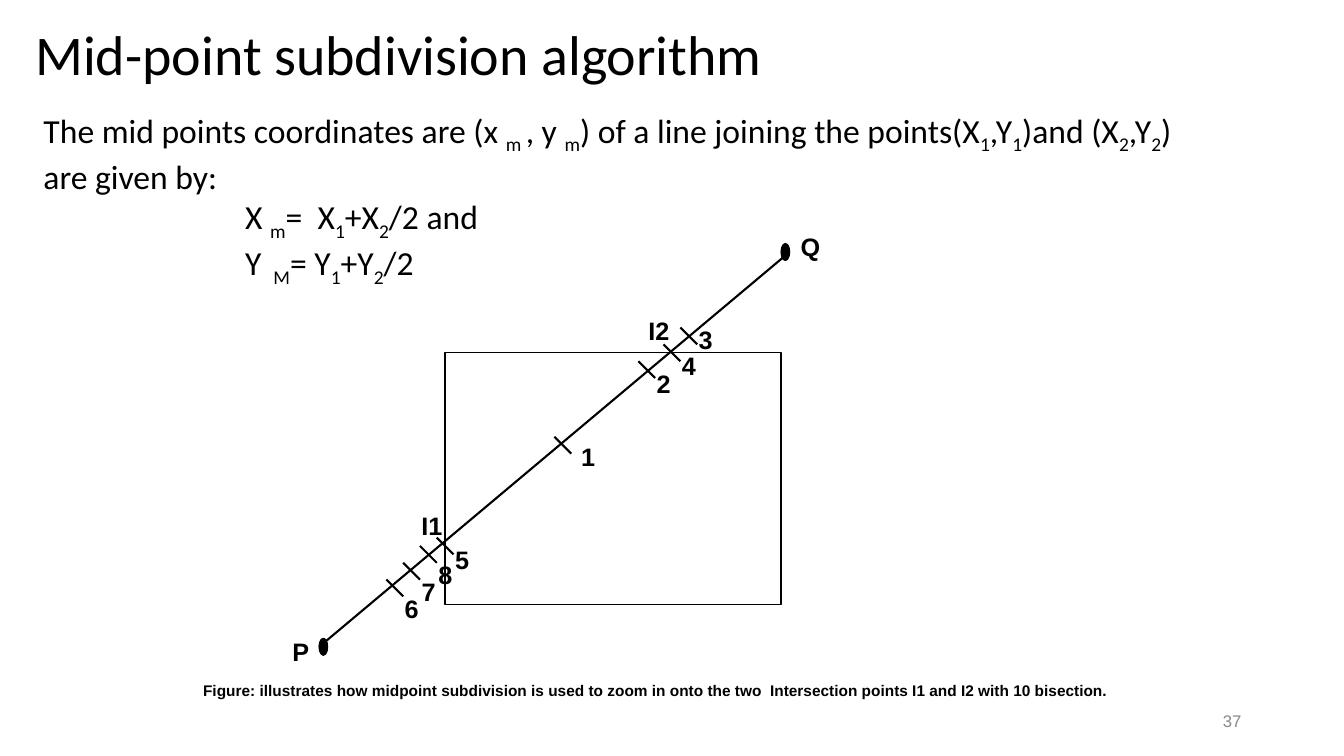
from dataclasses import dataclass
from lxml import etree
from pptx import Presentation, util as u
from pptx.dml.color import RGBColor
from pptx.enum import shapes, text
from pptx.oxml.ns import qn

PX = 9525


@dataclass
class Theme:
    ink = RGBColor(0, 0, 0)
    muted = RGBColor(0x89, 0x89, 0x89)
    heading = "Calibri"
    label = "Arial"
    title_pt = 40
    body_pt = 24
    label_pt = 18
    caption_pt = 11
    number_pt = 12


theme = Theme()
prs = Presentation()
prs.slide_width, prs.slide_height = 1280 * PX, 720 * PX
s = prs.slides.add_slide(prs.slide_layouts[5])


def write(box, content, size, font, color=theme.ink, bold=False):
    tf = box.text_frame
    tf.word_wrap = True
    tf.auto_size = text.MSO_AUTO_SIZE.NONE
    tf.vertical_anchor = text.MSO_ANCHOR.TOP
    for i, line in enumerate(content.split("\n")):
        p = tf.add_paragraph() if i else tf.paragraphs[0]
        p.alignment = text.PP_ALIGN.LEFT
        for k, part in enumerate(line.split("|")):
            r = p.add_run()
            r.text = part
            r.font.size, r.font.name, r.font.bold = u.Pt(size), font, bold
            r.font.color.rgb = color
            if k % 2:
                r.font._element.set("baseline", "-25000")
    return tf


def draw_line(x1, y1, x2, y2):
    c = s.shapes.add_connector(shapes.MSO_CONNECTOR.STRAIGHT,
                               x1 * PX, y1 * PX, x2 * PX, y2 * PX)
    c.line.color.rgb, c.line.width = theme.ink, u.Pt(1.5)
    etree.SubElement(c._element.spPr, qn("a:effectLst"))


title = s.shapes.title
title.left, title.top, title.width, title.height = 24 * PX, 14 * PX, 1064 * PX, 74 * PX
write(title, "Mid-point subdivision algorithm", theme.title_pt, theme.heading)

body = s.shapes.add_textbox(32 * PX, 100 * PX, 1116 * PX, 194 * PX)
formulas = (
    "The mid points coordinates are (x |m |, y |m|) of a line joining the "
    "points(X|1|,Y|1|)and (X|2|,Y|2|) are given by:\n"
    "X |m|=  X|1|+X|2|/2 and\n"
    "Y | M|= Y|1|+Y|2|/2"
)
tf = write(body, formulas, theme.body_pt, theme.heading)
for p in tf.paragraphs[1:]:
    p._p.get_or_add_pPr().set("marL", str(192 * PX))

window = s.shapes.add_shape(shapes.MSO_SHAPE.RECTANGLE,
                            424 * PX, 336 * PX, 320 * PX, 240 * PX)
window.shadow.inherit = False
window.fill.background()
window.line.color.rgb, window.line.width = theme.ink, u.Pt(1)

draw_line(752, 240, 304, 616)
for x, y in [(744, 232), (304, 608)]:
    dot = s.shapes.add_shape(shapes.MSO_SHAPE.OVAL, x * PX, y * PX, 8 * PX, 16 * PX)
    dot.shadow.inherit = False
    dot.fill.solid()
    dot.fill.fore_color.rgb = theme.ink
    dot.line.color.rgb, dot.line.width = theme.ink, u.Pt(1)

ticks = [(368, 552), (384, 536), (400, 520), (416, 512),
         (528, 416), (608, 344), (632, 328), (648, 312)]
for x, y in ticks:
    draw_line(x, y, x + 16, y + 16)

labels = [
    ("Q", 753, 216, 40), ("P", 269, 601, 36),
    ("6", 376, 560, 40), ("7", 392, 544, 32), ("8", 408, 528, 32), ("5", 424, 514, 32),
    ("1", 544, 416, 32), ("I1", 392, 481, 56), ("I2", 608, 296, 56),
    ("2", 616, 346, 32), ("4", 640, 329, 32), ("3", 656, 304, 32),
]
for name, x, y, w in labels:
    label = s.shapes.add_textbox(x * PX, y * PX, w * PX, 38 * PX)
    write(label, name, theme.label_pt, theme.label, bold=True)

caption = s.shapes.add_textbox(184 * PX, 644 * PX, 928 * PX, 28 * PX)
write(caption, "Figure: illustrates how midpoint subdivision is used to zoom in onto the two  "
      "Intersection points I1 and I2 with 10 bisection.",
      theme.caption_pt, theme.label, bold=True)

number = s.shapes.add_textbox(904 * PX, 667 * PX, 288 * PX, 38 * PX)
tf = write(number, "37", theme.number_pt, theme.label, theme.muted)
tf.vertical_anchor = text.MSO_ANCHOR.MIDDLE
tf.paragraphs[0].alignment = text.PP_ALIGN.RIGHT

prs.save("out.pptx")
